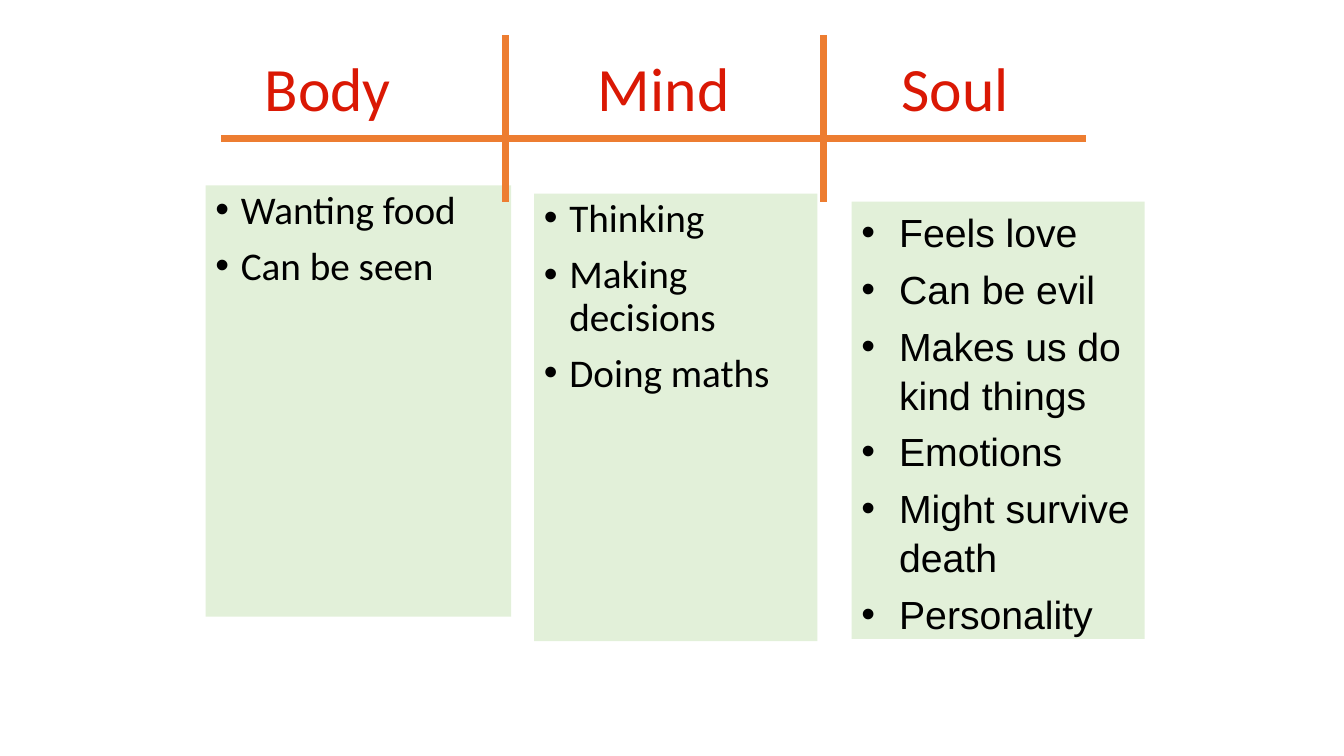
from lxml import etree
from pptx import Presentation
from pptx.dml.color import RGBColor
from pptx.enum.shapes import MSO_CONNECTOR, MSO_SHAPE
from pptx.enum.text import MSO_ANCHOR, PP_ALIGN
from pptx.oxml.ns import qn
from pptx.util import Cm, Pt

BLACK = RGBColor(0x00, 0x00, 0x00)
RED = RGBColor(0xDA, 0x18, 0x04)
ORANGE = RGBColor(0xED, 0x7D, 0x31)
PALE_GREEN = RGBColor(0xE2, 0xF0, 0xD9)

deck = Presentation()
deck.slide_width, deck.slide_height = Cm(33.87), Cm(19.05)
page = deck.slides.add_slide(deck.slide_layouts[6])


def set_font(para, name, size, color):
    para.font.name = name
    para.font.size = Pt(size)
    para.font.color.rgb = color


def add_panel(left, top, width, height, items, font, indent, leading, gap):
    panel = page.shapes.add_shape(
        MSO_SHAPE.RECTANGLE, Cm(left), Cm(top), Cm(width), Cm(height))
    panel.shadow.inherit = False
    panel.fill.solid()
    panel.fill.fore_color.rgb = PALE_GREEN
    panel.line.fill.background()
    frame = panel.text_frame
    frame.word_wrap = True
    frame.vertical_anchor = MSO_ANCHOR.TOP
    for index, item in enumerate(items):
        para = frame.add_paragraph() if index else frame.paragraphs[0]
        para.text = item
        para.alignment = PP_ALIGN.LEFT
        para.line_spacing = leading
        para.space_before = Pt(gap if index else 0)
        # Hanging bullet
        props = para._p.get_or_add_pPr()
        props.set("marL", str(Cm(indent)))
        props.set("indent", str(-Cm(indent)))
        etree.SubElement(props, qn("a:buFont")).set("typeface", "Arial")
        etree.SubElement(props, qn("a:buChar")).set("char", "•")
        set_font(para, font, 28, BLACK)


# Column headings on tab stops
heading = page.shapes.add_textbox(Cm(4.72), Cm(0.71), Cm(22.86), Cm(3.18))
heading.text_frame.word_wrap = True
heading.text_frame.vertical_anchor = MSO_ANCHOR.MIDDLE
para = heading.text_frame.paragraphs[0]
para.text = "\tBody\tMind\tSoul"
para.line_spacing = 0.9
tabs = etree.SubElement(para._p.get_or_add_pPr(), qn("a:tabLst"))
for position in (1.7, 10.1, 17.75):
    etree.SubElement(tabs, qn("a:tab"), pos=str(Cm(position)), algn="l")
set_font(para, "Calibri", 44, RED)

# Lists for body, mind and soul
add_panel(5.18, 4.67, 7.7, 10.87, ["Wanting food", "Can be seen"],
          "Calibri", 0.64, 0.9, 10)
add_panel(13.46, 4.88, 7.14, 11.28,
          ["Thinking", "Making decisions", "Doing maths"],
          "Calibri", 0.64, 0.9, 10)
add_panel(21.46, 5.08, 7.39, 11.02,
          ["Feels love", "Can be evil", "Makes us do kind things", "Emotions",
           "Might survive death", "Personality"],
          "Arial", 0.95, 1.04, 5.6)

# Dividers: two upright, one across
for x1, y1, x2, y2 in ((12.75, 0.89, 12.75, 5.08),
                       (20.75, 0.89, 20.75, 5.08),
                       (27.36, 3.48, 5.56, 3.48)):
    divider = page.shapes.add_connector(
        MSO_CONNECTOR.STRAIGHT, Cm(x1), Cm(y1), Cm(x2), Cm(y2))
    divider.line.color.rgb = ORANGE
    divider.line.width = Pt(5)
    etree.SubElement(divider._element.spPr, qn("a:effectLst"))

deck.save("out.pptx")
